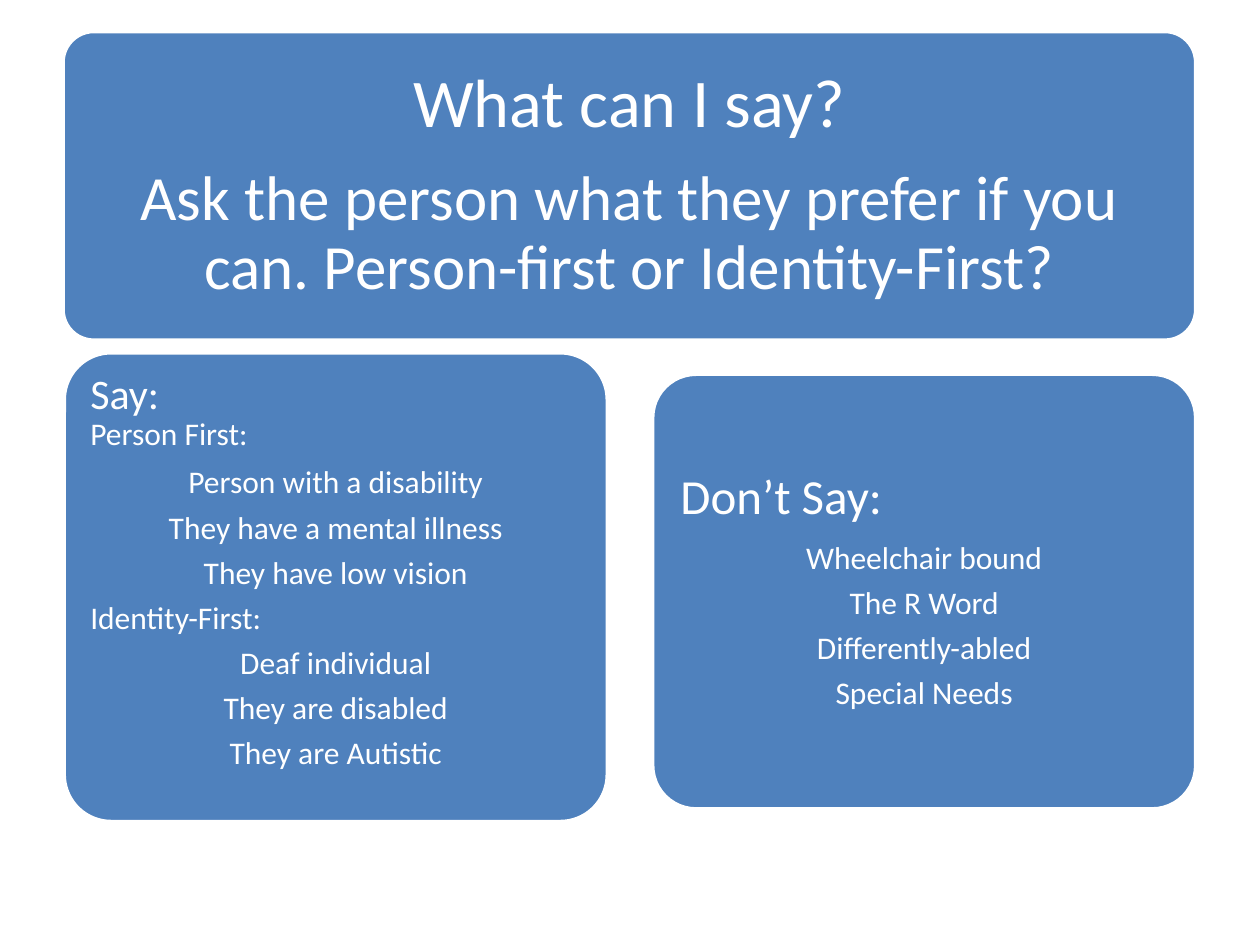
from pptx import Presentation
from pptx.dml.color import RGBColor
from pptx.enum.shapes import MSO_SHAPE
from pptx.enum.text import MSO_ANCHOR, PP_ALIGN
from pptx.util import Inches, Pt

BLUE = RGBColor(0x4F, 0x81, 0xBD)
WHITE = RGBColor(0xFF, 0xFF, 0xFF)
FONT = "Calibri"
LEFT, CENTER = PP_ALIGN.LEFT, PP_ALIGN.CENTER
HEADING = [
    (CENTER, [("What can I say?", 39)]),
    (CENTER, [("Ask the person what they prefer if you can. "
               "Person-first or Identity-First?", 36)]),
]
PERSON_FIRST = ["Person with a disability", "They have a mental illness", "They have low vision"]
IDENTITY_FIRST = ["Deaf individual", "They are disabled", "They are Autistic"]
AVOID = ["Wheelchair bound", "The R Word", "Differently-abled", "Special Needs"]


def centered_lines(texts):
    """Return one centred 18 point paragraph for each text."""
    return [(CENTER, [(text, 18)]) for text in texts]


def add_panel(slide, box, margin):
    """Add a rounded panel in the box and return its text frame."""
    shape = slide.shapes.add_shape(MSO_SHAPE.ROUNDED_RECTANGLE, *map(Inches, box))
    shape.adjustments[0] = 0.1
    shape.shadow.inherit = False
    shape.fill.solid()
    shape.fill.fore_color.rgb = BLUE
    shape.line.color.rgb = WHITE
    shape.line.width = Pt(2)
    frame = shape.text_frame
    frame.word_wrap = True
    frame.vertical_anchor = MSO_ANCHOR.MIDDLE
    frame.margin_left = frame.margin_right = Inches(margin)
    frame.margin_top = frame.margin_bottom = Inches(margin)
    return frame


def fill_text(frame, paragraphs):
    """Write the paragraphs, with a line break between the runs of each."""
    for index, (alignment, runs) in enumerate(paragraphs):
        paragraph = frame.add_paragraph() if index else frame.paragraphs[0]
        paragraph.alignment = alignment
        paragraph.line_spacing = 0.9
        paragraph.space_after = Pt(round(0.35 * runs[0][1], 1))
        for position, (text, size) in enumerate(runs):
            if position:
                paragraph.add_line_break()
            run = paragraph.add_run()
            run.text = text
            run.font.name = FONT
            run.font.size = Pt(size)
            run.font.color.rgb = WHITE


def add_heading(slide, box):
    """Add the question panel."""
    fill_text(add_panel(slide, box, 0.16), HEADING)


def add_say(slide, box):
    """Add the panel of preferred wording, set from the top."""
    frame = add_panel(slide, box, 0.1)
    frame.vertical_anchor = MSO_ANCHOR.TOP
    frame.margin_top = Inches(0.05)
    fill_text(frame, [
        (LEFT, [("Say:", 24), ("Person First:", 18)]),
        *centered_lines(PERSON_FIRST),
        (LEFT, [("Identity-First:", 18)]),
        *centered_lines(IDENTITY_FIRST),
    ])


def add_avoid(slide, box):
    """Add the panel of wording to avoid."""
    frame = add_panel(slide, box, 0.12)
    fill_text(frame, [(LEFT, [("Don’t Say:", 28)]), *centered_lines(AVOID)])


def main():
    """Build and save the slide."""
    presentation = Presentation()
    presentation.slide_width = Inches(10)
    presentation.slide_height = Inches(7.5)
    slide = presentation.slides.add_slide(presentation.slide_layouts[6])
    add_heading(slide, (0.5, 0.25, 8.99, 2.45))
    add_say(slide, (0.51, 2.8, 4.31, 3.72))
    add_avoid(slide, (5.18, 2.97, 4.31, 3.45))
    presentation.save("out.pptx")


if __name__ == "__main__":
    main()
